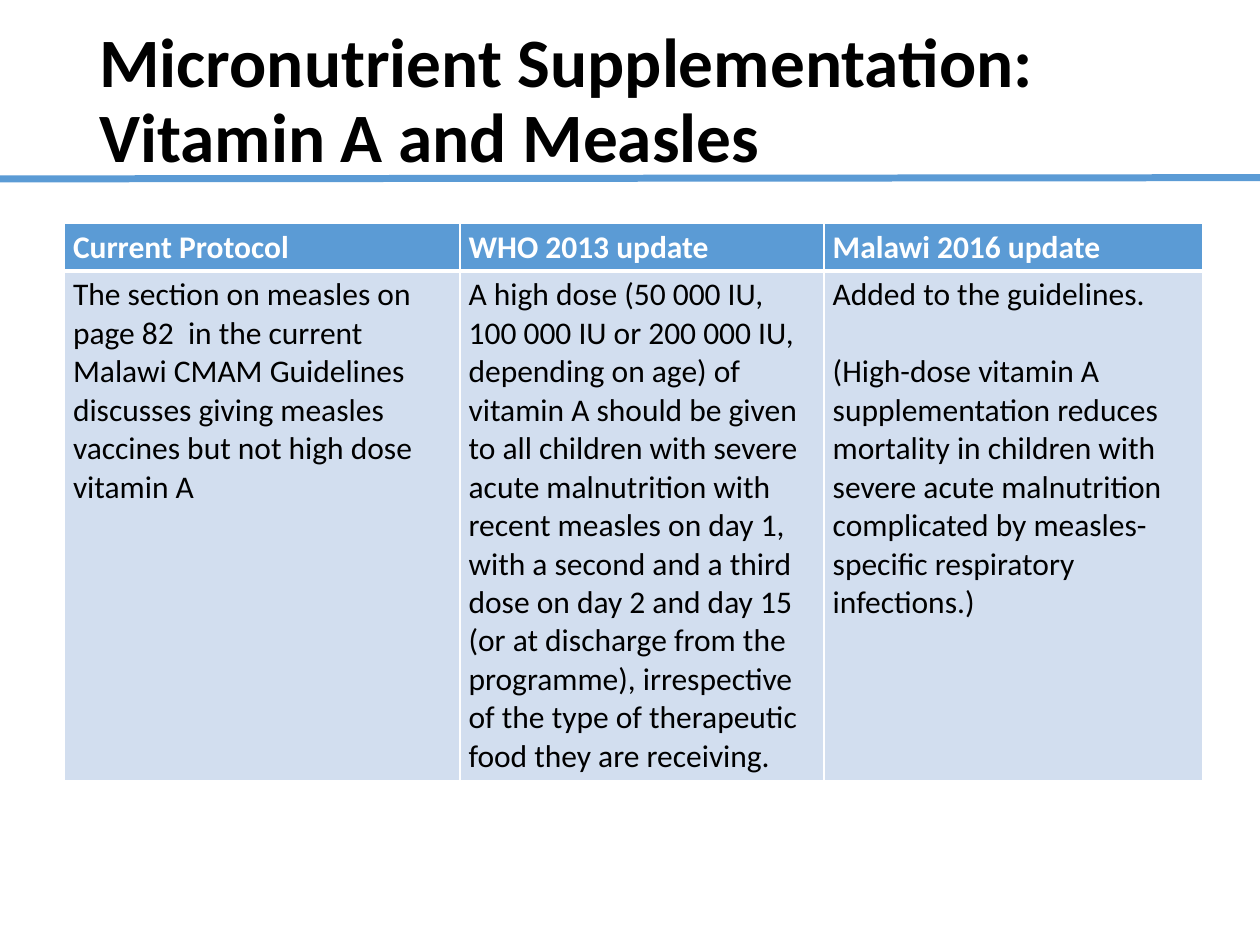
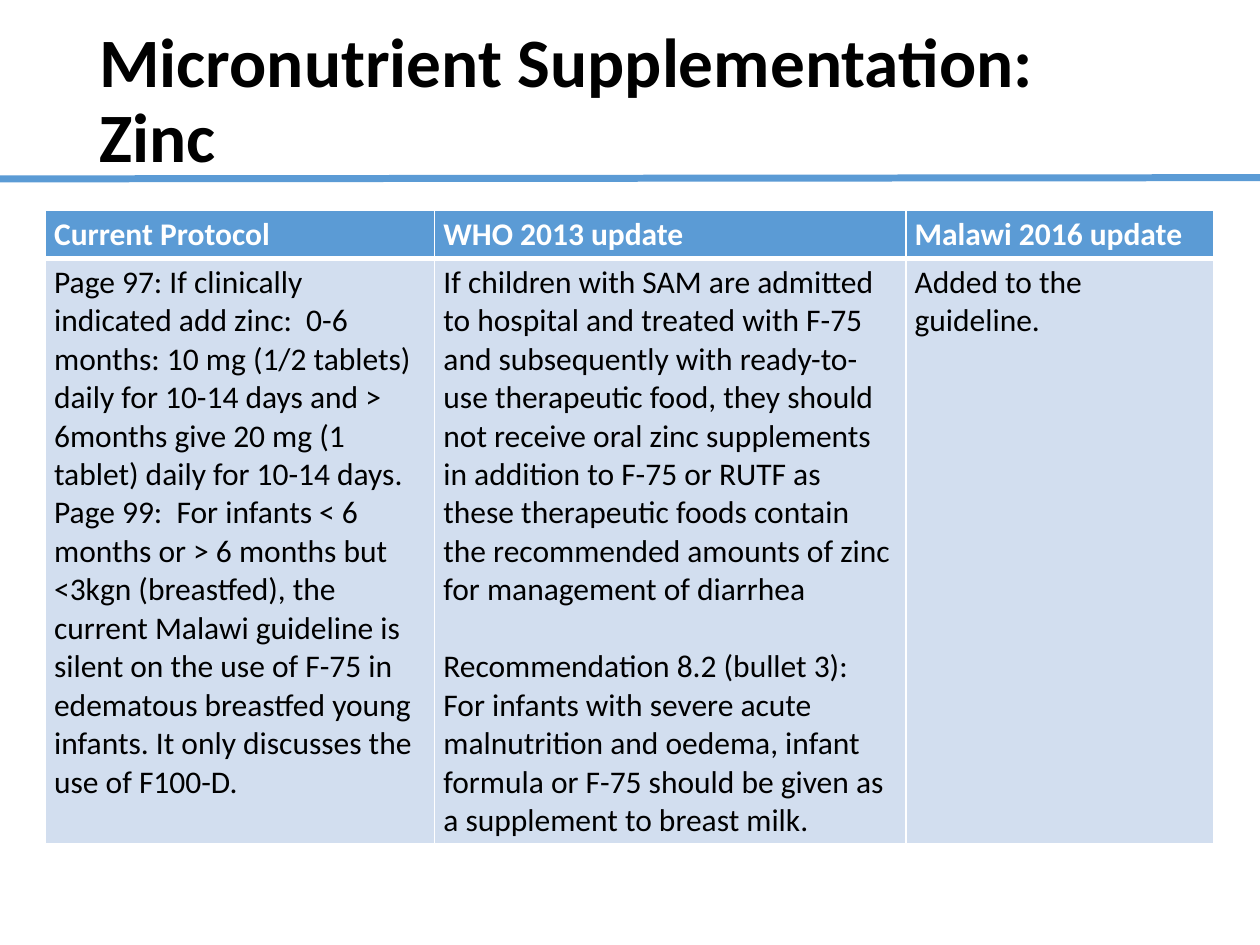
from lxml import etree
from pptx import Presentation
from pptx.dml.color import RGBColor
from pptx.enum import shapes, text
from pptx.oxml import ns
from pptx.util import Inches, Pt

FONT = "Calibri"
HUES = {"blue": "5B9BD5", "pale": "D2DEEF", "white": "FFFFFF", "black": "000000"}
HEADS = ["Current Protocol", "WHO 2013 update", "Malawi 2016 update"]
GAP = 22

MEASLES = [
    "The section on measles on page 82  in the current Malawi CMAM Guidelines "
    "discusses giving measles vaccines but not high dose vitamin A",
    "A high dose (50 000 IU, 100 000 IU or 200 000 IU, depending on age) of "
    "vitamin A should be given to all children with severe acute malnutrition "
    "with recent measles on day 1, with a second and a third dose on day 2 and "
    "day 15 (or at discharge from the programme), irrespective of the type of "
    "therapeutic food they are receiving.",
    "Added to the guidelines.\n\n"
    "(High-dose vitamin A supplementation reduces mortality in children with "
    "severe acute malnutrition complicated by measles-specific respiratory "
    "infections.)",
]
ZINC = [
    "Page 97: If clinically indicated add zinc:  0-6 months: 10 mg (1/2 tablets) "
    "daily for 10-14 days and > 6months give 20 mg (1 tablet) daily for 10-14 "
    "days. Page 99:  For infants < 6 months or > 6 months but <3kgn (breastfed), "
    "the current Malawi guideline is silent on the use of F-75 in edematous "
    "breastfed young infants. It only discusses the use of F100-D.",
    "If children with SAM are admitted to hospital and treated with F-75 and "
    "subsequently with ready-to-use therapeutic food, they should not receive "
    "oral zinc supplements in addition to F-75 or RUTF as these therapeutic "
    "foods contain the recommended amounts of zinc for management of diarrhea\n\n"
    "Recommendation 8.2 (bullet 3):\n"
    "For infants with severe acute malnutrition and oedema, infant formula or "
    "F-75 should be given as a supplement to breast milk.",
    "Added to the guideline.",
]


def hue(name):
    return RGBColor.from_string(HUES[name])


def style(para, size, color, bold):
    font = para.font
    font.name, font.size, font.bold = FONT, Pt(size), bold
    font.color.rgb = hue(color)


def write(frame, words, size, color, bold):
    frame.word_wrap = True
    first = True
    for block in words.split("\n\n"):
        for index, line in enumerate(block.split("\n")):
            para = frame.paragraphs[0] if first else frame.add_paragraph()
            para.text = line
            style(para, size, color, bold)
            if index == 0 and not first:
                para.space_before = Pt(GAP)
            first = False


def title(slide, words):
    box = slide.shapes.add_textbox(Inches(0.69), Inches(0.4), Inches(8.62), Inches(0.83))
    frame = box.text_frame
    frame.vertical_anchor = text.MSO_ANCHOR.MIDDLE
    write(frame, words, 39.6, "black", True)
    for para in frame.paragraphs:
        para.line_spacing = 0.9


def rule(slide):
    line = slide.shapes.add_connector(
        shapes.MSO_CONNECTOR.STRAIGHT, 0, Inches(1.42), Inches(10), Inches(1.41))
    line.line.color.rgb = hue("blue")
    line.line.width = Pt(4)
    etree.SubElement(line._element.spPr, ns.qn("a:effectLst"))


def border(cell, **widths):
    props = cell._tc.get_or_add_tcPr()
    for side in "LRTB":
        edge = etree.SubElement(props, ns.qn("a:ln" + side), w=str(Pt(widths.get(side, 1))))
        fill = etree.SubElement(edge, ns.qn("a:solidFill"))
        etree.SubElement(fill, ns.qn("a:srgbClr"), val=HUES["white"])


def paint(cell, words, fill, color, bold):
    cell.margin_left = cell.margin_right = Inches(0.07)
    cell.margin_top = cell.margin_bottom = Inches(0.04)
    cell.fill.solid()
    cell.fill.fore_color.rgb = hue(fill)
    write(cell.text_frame, words, 18, color, bold)


def grid(slide, left, top, widths, depth, body):
    heights = [0.37, depth]
    table = slide.shapes.add_table(
        2, len(widths), Inches(left), Inches(top),
        Inches(sum(widths)), Inches(sum(heights))).table
    for row, height in zip(table.rows, heights):
        row.height = Inches(height)
    for col, width in enumerate(widths):
        table.columns[col].width = Inches(width)
        head, cell = table.cell(0, col), table.cell(1, col)
        border(head, B=3)
        border(cell, T=3)
        paint(head, HEADS[col], "blue", "white", True)
        paint(cell, body[col], "pale", "black", False)


def page(deck, name, *table):
    slide = deck.slides.add_slide(deck.slide_layouts[6])
    rule(slide)
    title(slide, "Micronutrient Supplementation:\n" + name)
    grid(slide, *table)


def main():
    deck = Presentation()
    deck.slide_width, deck.slide_height = Inches(10), Inches(7.5)
    page(deck, "Vitamin A and Measles", 0.51, 1.77, [3.14, 2.89, 3.01], 4.05, MEASLES)
    page(deck, "Zinc", 0.36, 1.67, [3.09, 3.74, 2.44], 4.65, ZINC)
    deck.save("out.pptx")


if __name__ == "__main__":
    main()
